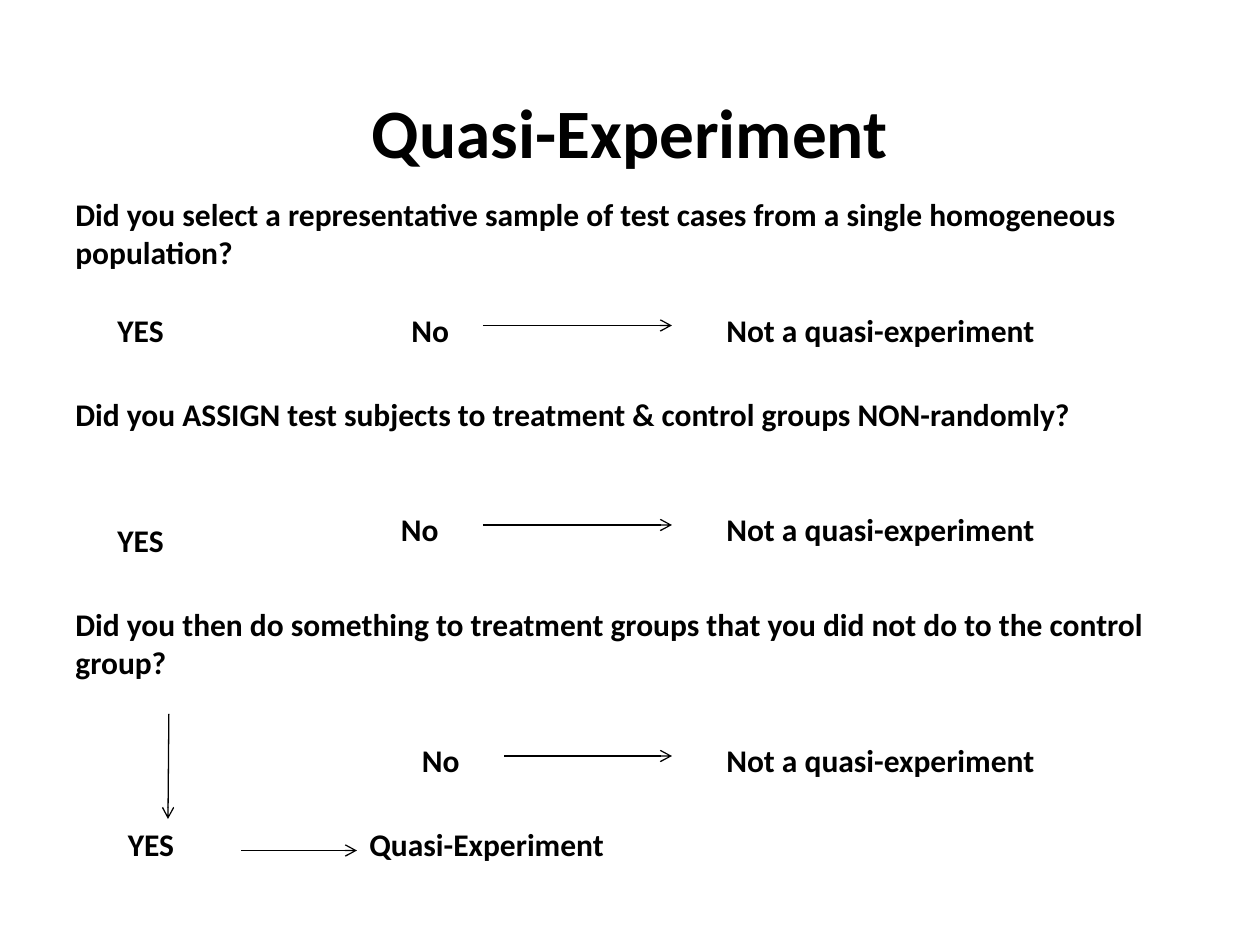
from dataclasses import dataclass

from lxml import etree
from pptx import Presentation
from pptx.dml.color import RGBColor
from pptx.enum.shapes import MSO_CONNECTOR
from pptx.enum.text import MSO_ANCHOR, MSO_AUTO_SIZE, PP_ALIGN
from pptx.oxml.ns import qn
from pptx.util import Pt

STRAIGHT = MSO_CONNECTOR.STRAIGHT
MIDDLE = MSO_ANCHOR.MIDDLE
FIT_SHAPE, NO_FIT = MSO_AUTO_SIZE.SHAPE_TO_FIT_TEXT, MSO_AUTO_SIZE.NONE
CENTER, LEFT = PP_ALIGN.CENTER, PP_ALIGN.LEFT


@dataclass(frozen=True)
class Theme:
    font: str = "Calibri"
    ink: RGBColor = RGBColor(0, 0, 0)
    paper: RGBColor = RGBColor(255, 255, 255)
    title_size: float = 39.6
    body_size: float = 18
    line_width: float = 0.75


@dataclass(frozen=True)
class Label:
    text: str
    left: float
    top: float
    width: float
    height: float = 36.5
    wrap: bool = False


@dataclass(frozen=True)
class Arrow:
    x1: float
    y1: float
    x2: float
    y2: float


@dataclass(frozen=True)
class NoBranch:
    no_left: float
    arrow_left: float
    top: float


THEME = Theme()
OUTCOME_LEFT, ARROW_RIGHT, ARROW_DROP = 408, 384, 12

QUESTIONS = [
    Label(text, 36, top, 642, 65.5, wrap=True)
    for text, top in (
        ("Did you select a representative sample of test cases from a single "
         "homogeneous population?", 108),
        ("Did you ASSIGN test subjects to treatment & control groups "
         "NON-randomly?", 222),
        ("Did you then do something to treatment groups that you did not do "
         "to the control group?", 342),
    )
]
NO_BRANCHES = [
    NoBranch(228, 276, 174),
    NoBranch(222, 276, 288),
    NoBranch(234, 288, 420),
]
YES_LABELS = [
    Label("YES", left, top, 63.5)
    for left, top in ((60, 174), (60, 294), (66, 468))
]
RESULT = Label("Quasi-Experiment", 204, 468, 209)
YES_ARROWS = [Arrow(96.5, 408, 96, 468), Arrow(138, 486, 204, 486)]


def add_run(p, text: str, size: float, align=LEFT) -> None:
    p.alignment = align
    r = p.add_run()
    r.text = text
    r.font.name = THEME.font
    r.font.size = Pt(size)
    r.font.bold = True
    r.font.color.rgb = THEME.ink


def draw_label(shapes, label: Label) -> None:
    sp = shapes.add_textbox(Pt(label.left), Pt(label.top),
                            Pt(label.width), Pt(label.height))
    tf = sp.text_frame
    tf.word_wrap = label.wrap
    tf.auto_size = FIT_SHAPE
    add_run(tf.paragraphs[0], label.text, THEME.body_size)


def draw_arrow(shapes, arrow: Arrow) -> None:
    sp = shapes.add_connector(STRAIGHT, Pt(arrow.x1), Pt(arrow.y1),
                              Pt(arrow.x2), Pt(arrow.y2))
    sp.line.color.rgb = THEME.ink
    sp.line.width = Pt(THEME.line_width)
    etree.SubElement(sp.line._get_or_add_ln(), qn("a:tailEnd"), type="arrow")
    etree.SubElement(sp._element.spPr, qn("a:effectLst"))


def draw_no_branch(shapes, branch: NoBranch) -> None:
    group = shapes.add_group_shape().shapes
    y = branch.top + ARROW_DROP
    draw_label(group, Label("Not a quasi-experiment", OUTCOME_LEFT,
                            branch.top, 265.5))
    draw_arrow(group, Arrow(branch.arrow_left, y, ARROW_RIGHT, y))
    draw_label(group, Label("No", branch.no_left, branch.top, 45.5))


def draw_title(s, text: str) -> None:
    sp = s.shapes.title
    sp.left, sp.top, sp.width, sp.height = Pt(54), Pt(48), Pt(612), Pt(54)
    tf = sp.text_frame
    tf.word_wrap = True
    tf.auto_size = NO_FIT
    tf.vertical_anchor = MIDDLE
    add_run(tf.paragraphs[0], text, THEME.title_size, CENTER)


def main() -> None:
    prs = Presentation()
    prs.slide_width, prs.slide_height = Pt(720), Pt(540)
    s = prs.slides.add_slide(prs.slide_layouts[5])  # title only
    s.background.fill.solid()
    s.background.fill.fore_color.rgb = THEME.paper

    # Title and the three questions
    draw_title(s, "Quasi-Experiment")
    for question in QUESTIONS:
        draw_label(s.shapes, question)

    # "No" answers lead right, "YES" answers lead down to the result
    for branch in NO_BRANCHES:
        draw_no_branch(s.shapes, branch)
    for label in [*YES_LABELS, RESULT]:
        draw_label(s.shapes, label)
    for arrow in YES_ARROWS:
        draw_arrow(s.shapes, arrow)

    prs.save("out.pptx")


if __name__ == "__main__":
    main()
